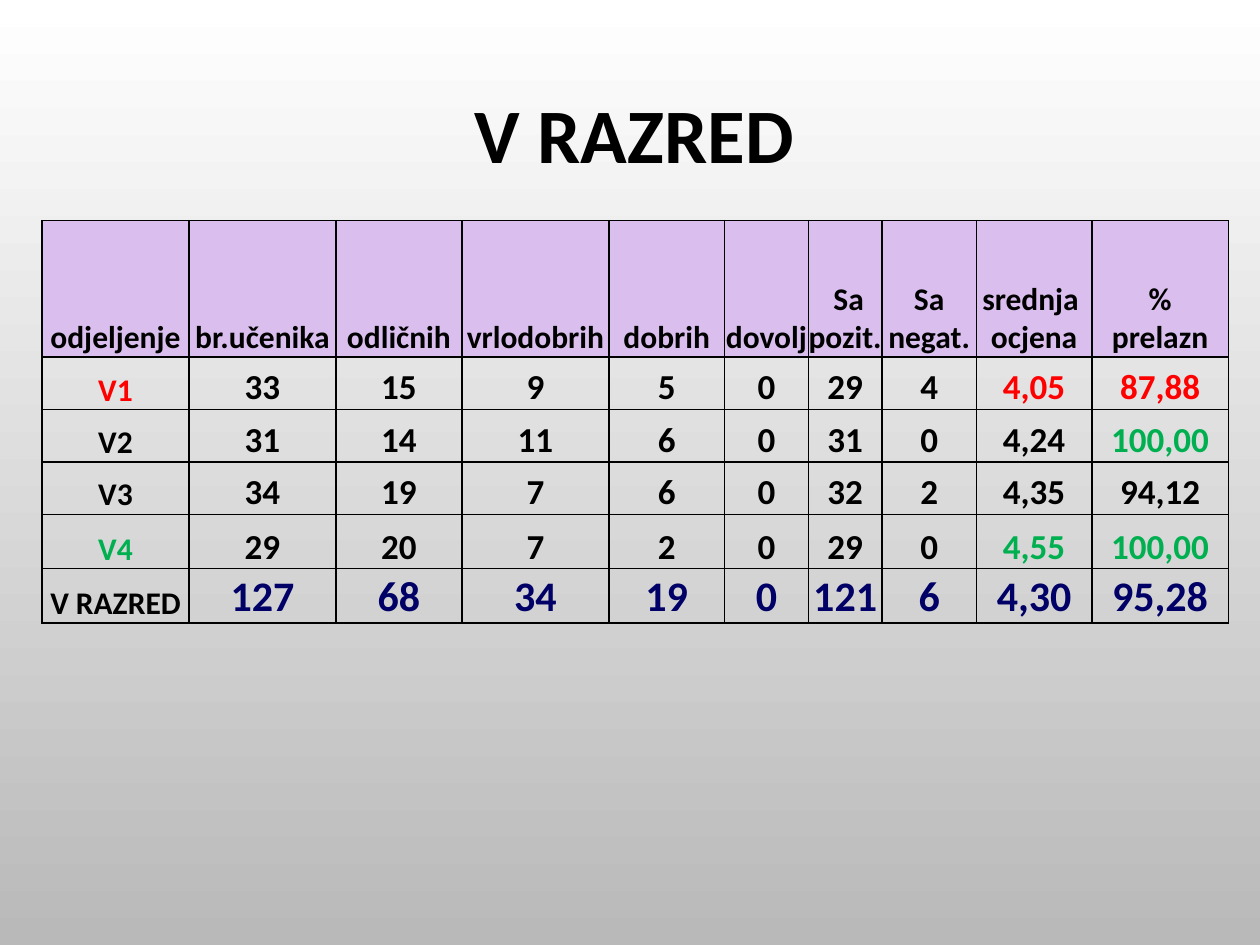
from lxml import etree
from pptx import Presentation
from pptx.dml.color import RGBColor
from pptx.enum.text import MSO_ANCHOR, MSO_AUTO_SIZE, PP_ALIGN
from pptx.oxml.ns import qn
from pptx.util import Pt

LEFT, CENTER = PP_ALIGN.LEFT, PP_ALIGN.CENTER
TOP, BOTTOM = MSO_ANCHOR.TOP, MSO_ANCHOR.BOTTOM
GROW = MSO_AUTO_SIZE.SHAPE_TO_FIT_TEXT

COLORS = {
    "black": "000000", "white": "FFFFFF", "gray": "B9B9B9",
    "lilac": "DABEED", "red": "FF0000", "green": "00B050", "navy": "000066",
}

HEAD = ["odjeljenje", "br.učenika", "odličnih", "vrlodobrih", "dobrih", "dovolj",
        " Sa pozit.", "Sa negat.", "srednja \nocjena", "%\nprelazn"]
GRADES = [
    ["V1", "33", "15", "9", "5", "0", "29", "4", "4,05", "87,88"],
    ["V2", "31", "14", "11", "6", "0", "31", "0", "4,24", "100,00"],
    ["V3", "34", "19", "7", "6", "0", "32", "2", "4,35", "94,12"],
    ["V4", "29", "20", "7", "2", "0", "29", "0", "4,55", "100,00"],
]
TOTAL = ["V RAZRED", "127", "68", "34", "19", "0", "121", "6", "4,30", "95,28"]
WIDTHS = [84, 84, 72, 84, 66, 48, 42, 54, 66, 78]
HEIGHTS = [78, 30, 30, 30, 31, 31]

# Weakest and best results, by (row, column)
MARKS = {(1, 0): "red", (1, 8): "red", (1, 9): "red", (2, 9): "green",
         (4, 0): "green", (4, 8): "green", (4, 9): "green"}


def rgb(name):
    return RGBColor.from_string(COLORS[name])


def write(frame, text, size=18, color="black", align=CENTER, line=None, after=None):
    frame.text = text
    for para in frame.paragraphs:
        para.alignment = align
        if line:
            para.line_spacing = line
        if after is not None:
            para.space_after = Pt(after)
        for run in para.runs:
            font = run.font
            font.name, font.size, font.bold = "Calibri", Pt(size), True
            font.color.rgb = rgb(color)


class Deck:
    def __init__(self):
        self.prs = Presentation()
        self.prs.slide_width, self.prs.slide_height = Pt(720), Pt(540)
        self.slide = self.prs.slides.add_slide(self.prs.slide_layouts[5])

    def back(self, first, last):
        fill = self.slide.background.fill
        fill.gradient()
        fill.gradient_angle = 270
        for stop, name, place in zip(fill.gradient_stops, (first, last), (0, 1)):
            stop.color.rgb = rgb(name)
            stop.position = place

    def title(self, text, x, y, w, h):
        box = self.slide.shapes.title
        box.left, box.top, box.width, box.height = Pt(x), Pt(y), Pt(w), Pt(h)
        frame = box.text_frame
        frame.word_wrap, frame.auto_size = True, GROW
        frame.vertical_anchor = TOP
        write(frame, text, size=44, align=LEFT, line=1.07, after=8)

    def table(self, rows, x, y):
        table = self.slide.shapes.add_table(
            len(rows), len(WIDTHS), Pt(x), Pt(y),
            Pt(sum(WIDTHS)), Pt(sum(HEIGHTS))).table
        table.first_row = table.horz_banding = False
        for col, width in zip(table.columns, WIDTHS):
            col.width = Pt(width)
        for row, height in zip(table.rows, HEIGHTS):
            row.height = Pt(height)
        for r, row in enumerate(rows):
            for c, text in enumerate(row):
                self.cell(table.cell(r, c), text, r, c, len(rows) - 1)

    def cell(self, cell, text, r, c, last):
        cell.margin_left = cell.margin_right = 0
        cell.margin_top = cell.margin_bottom = 0
        cell.vertical_anchor = BOTTOM
        self.border(cell)
        if r == 0:
            cell.fill.solid()
            cell.fill.fore_color.rgb = rgb("lilac")
        else:
            cell.fill.background()
        size, color = 20, MARKS.get((r, c), "black")
        if r == 0 or c == 0:
            size = 18
        elif r == last:
            size, color = 24, "navy"
        write(cell.text_frame, text, size=size, color=color)

    def border(self, cell):
        props = cell._tc.get_or_add_tcPr()
        for side in ("lnL", "lnR", "lnT", "lnB"):
            edge = etree.SubElement(props, qn("a:" + side), w=str(Pt(1)))
            paint = etree.SubElement(edge, qn("a:solidFill"))
            etree.SubElement(paint, qn("a:srgbClr"), val=COLORS["black"])


def main():
    deck = Deck()
    # Background and title
    deck.back("white", "gray")
    deck.title("V RAZRED", 264, 42, 247, 64)
    # Results by class
    deck.table([HEAD, *GRADES, TOTAL], 24, 126)
    deck.prs.save("out.pptx")


if __name__ == "__main__":
    main()
